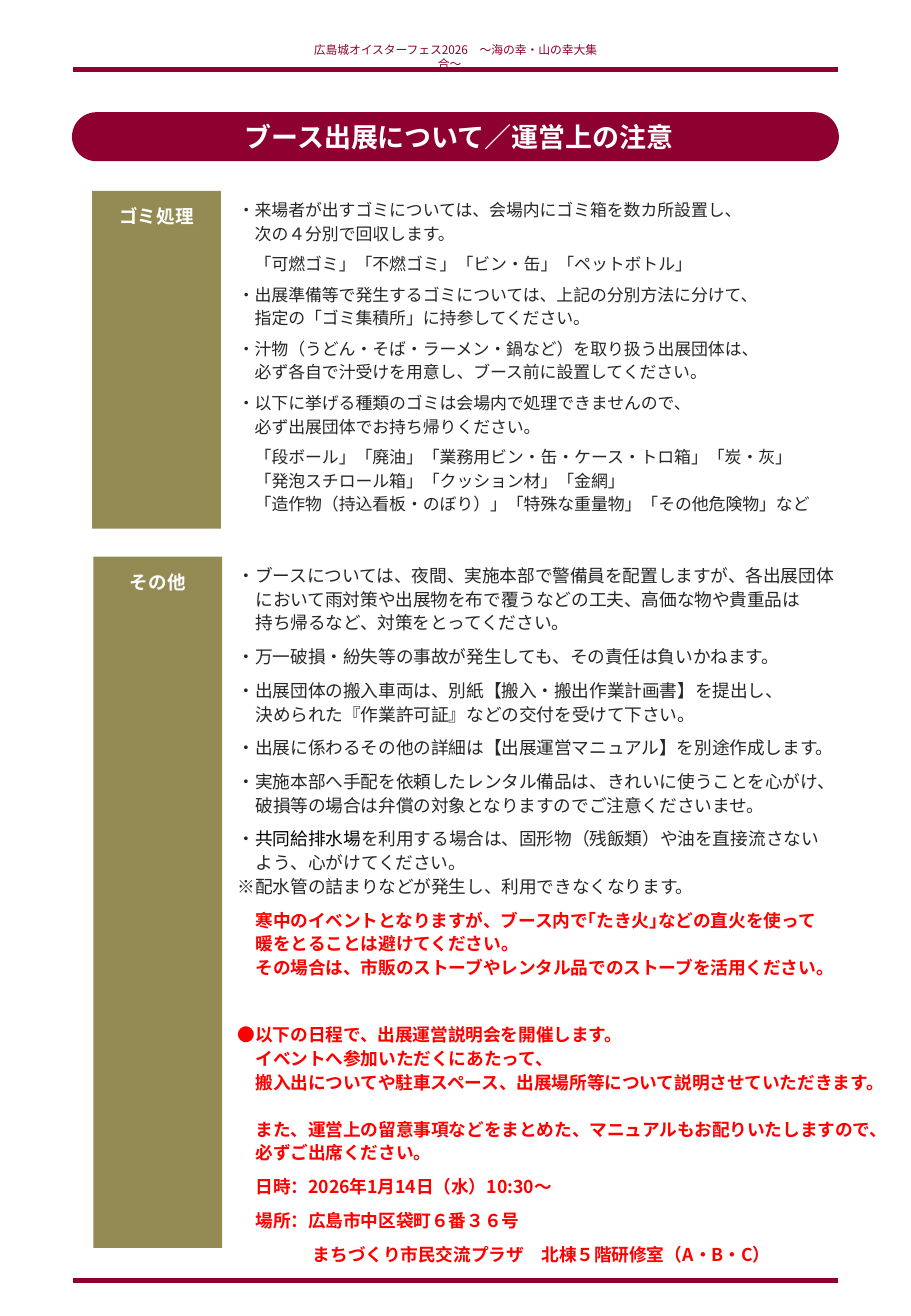
from lxml.etree import SubElement
from pptx import Presentation
from pptx.dml.color import RGBColor
from pptx.enum.shapes import MSO_CONNECTOR, MSO_SHAPE
from pptx.enum.text import MSO_ANCHOR as ANCHOR, MSO_AUTO_SIZE as FIT, PP_ALIGN as ALIGN
from pptx.oxml.ns import qn
from pptx.util import Pt

PX = 9144
FONT = "Noto Sans CJK JP"
WINE, OLIVE, INK, BLACK, RED, WHITE = "8E002F", "948A54", "262626", "000000", "FF0000", "FFFFFF"
PAGE = (750, 1083)
RULE_X, RULE_YS = (60, 690), (57, 1054)
MARKERS = "・●※"
BLACK_PHRASE = "共同給排水場"

HEADER = "広島城オイスターフェス2026　～海の幸・山の幸大集合～　"
TITLE = "ブース出展について／運営上の注意"
GARBAGE = [
    "・来場者が出すゴミについては、会場内にゴミ箱を数カ所設置し、\n次の４分別で回収します。",
    "「可燃ゴミ」「不燃ゴミ」「ビン・缶」「ペットボトル」",
    "・出展準備等で発生するゴミについては、上記の分別方法に分けて、\n指定の「ゴミ集積所」に持参してください。",
    "・汁物（うどん・そば・ラーメン・鍋など）を取り扱う出展団体は、\n必ず各自で汁受けを用意し、ブース前に設置してください。",
    "・以下に挙げる種類のゴミは会場内で処理できませんので、\n必ず出展団体でお持ち帰りください。",
    "「段ボール」「廃油」「業務用ビン・缶・ケース・トロ箱」「炭・灰」\n"
    "「発泡スチロール箱」「クッション材」「金網」\n"
    "「造作物（持込看板・のぼり）」「特殊な重量物」「その他危険物」など",
]
OTHERS = [
    "・ブースについては、夜間、実施本部で警備員を配置しますが、各出展団体\n"
    "において雨対策や出展物を布で覆うなどの工夫、高価な物や貴重品は\n"
    "持ち帰るなど、対策をとってください。",
    "・万一破損・紛失等の事故が発生しても、その責任は負いかねます。",
    "・出展団体の搬入車両は、別紙【搬入・搬出作業計画書】を提出し、\n決められた『作業許可証』などの交付を受けて下さい。",
    "・出展に係わるその他の詳細は【出展運営マニュアル】を別途作成します。",
    "・実施本部へ手配を依頼したレンタル備品は、きれいに使うことを心がけ、\n破損等の場合は弁償の対象となりますのでご注意くださいませ。",
    "・共同給排水場を利用する場合は、固形物（残飯類）や油を直接流さない\nよう、心がけてください。",
    ("※配水管の詰まりなどが発生し、利用できなくなります。", {"before": 0}),
]
NOTICES = [
    "寒中のイベントとなりますが、ブース内で｢たき火｣などの直火を使って\n"
    "暖をとることは避けてください。\n"
    "その場合は、市販のストーブやレンタル品でのストーブを活用ください。",
    ("●以下の日程で、出展運営説明会を開催します。\nイベントへ参加いただくにあたって、\n"
     "搬入出についてや駐車スペース、出展場所等について説明させていただきます。", {"before": 26}),
    ("また、運営上の留意事項などをまとめた、マニュアルもお配りいたしますので、\n必ずご出席ください。", {"before": 14}),
    "日時：2026年1月14日（水）10:30〜",
    "場所：広島市中区袋町６番３６号",
    ("まちづくり市民交流プラザ　北棟５階研修室（A・B・C）", {"margin": 44.5}),
]
SECTIONS = [
    ("ゴミ処理", (76, 157, 106, 278), (186, 157, 531, 274), 10, 4, [(GARBAGE, INK, False)]),
    ("その他", (77, 458, 106, 569), (186, 458, 564, 593), 10.5, 6,
     [(OTHERS, INK, False), (NOTICES, RED, True)]),
]


def rgb(color):
    return RGBColor.from_string(color)


def px(*lengths):
    return [length * PX for length in lengths]


def apply(target, values):
    for name, value in values.items():
        setattr(target, name, value)


def add_text(paragraph, text, size, color, bold=False):
    for number, line in enumerate(text.split("\n")):
        if number:
            paragraph.add_line_break()
        for piece in filter(None, line.partition(BLACK_PHRASE)):
            run = paragraph.add_run()
            run.text = piece
            apply(run.font, {"size": Pt(size), "bold": bold, "name": FONT})
            run.font.color.rgb = rgb(BLACK if piece == BLACK_PHRASE else color)
            SubElement(run.font._element, qn("a:ea")).set("typeface", FONT)


def add_textbox(slide, box):
    frame = slide.shapes.add_textbox(*px(*box)).text_frame
    apply(frame, {"word_wrap": True, "auto_size": FIT.SHAPE_TO_FIT_TEXT})
    return frame


def add_label(slide, kind, box, fill, text, size, frame_values):
    label = slide.shapes.add_shape(kind, *px(*box))
    label.shadow.inherit = False
    label.fill.solid()
    label.fill.fore_color.rgb = rgb(fill)
    label.line.fill.background()
    apply(label.text_frame, {"word_wrap": False, **frame_values})
    heading = label.text_frame.paragraphs[0]
    heading.alignment = ALIGN.CENTER
    add_text(heading, text, size, WHITE, True)
    return label


def add_body(slide, box, size, gap, groups):
    frame = add_textbox(slide, box)
    entries = [(entry, color, bold) for group, color, bold in groups for entry in group]
    for number, (entry, color, bold) in enumerate(entries):
        text, layout = (entry, {}) if isinstance(entry, str) else entry
        paragraph = frame.add_paragraph() if number else frame.paragraphs[0]
        apply(paragraph, {"line_spacing": Pt(14), "space_before": Pt(layout.get("before", gap))})
        properties = paragraph._p.get_or_add_pPr()
        properties.set("marL", str(Pt(layout.get("margin", size))))
        properties.set("indent", str(-Pt(size) if text[0] in MARKERS else 0))
        add_text(paragraph, text, size, color, bold)


def add_rule(slide, y):
    left, right = RULE_X
    rule = slide.shapes.add_connector(MSO_CONNECTOR.STRAIGHT, *px(left, y, right, y))
    rule.line.width = Pt(3)
    rule.line.color.rgb = rgb(WINE)
    SubElement(rule._element.spPr, qn("a:effectLst"))


def main():
    deck = Presentation()
    deck.slide_width, deck.slide_height = px(*PAGE)
    slide = deck.slides.add_slide(deck.slide_layouts[6])

    for y in RULE_YS:
        add_rule(slide, y)

    header = add_textbox(slide, (235, 30, 280, 22)).paragraphs[0]
    header.alignment = ALIGN.CENTER
    add_text(header, HEADER, 7, WINE)

    banner = add_label(slide, MSO_SHAPE.ROUNDED_RECTANGLE, (60, 93, 630, 39), WINE, TITLE, 16,
                       {"vertical_anchor": ANCHOR.MIDDLE, "margin_left": 16 * PX})
    banner.adjustments[0] = 0.5
    banner.line.width = Pt(1)
    banner.line.color.rgb = rgb(WINE)

    for name, label_box, body_box, size, gap, groups in SECTIONS:
        add_label(slide, MSO_SHAPE.RECTANGLE, label_box, OLIVE, name, 11,
                  {"vertical_anchor": ANCHOR.TOP, "margin_top": 12 * PX})
        add_body(slide, body_box, size, gap, groups)

    deck.save("out.pptx")


if __name__ == "__main__":
    main()
